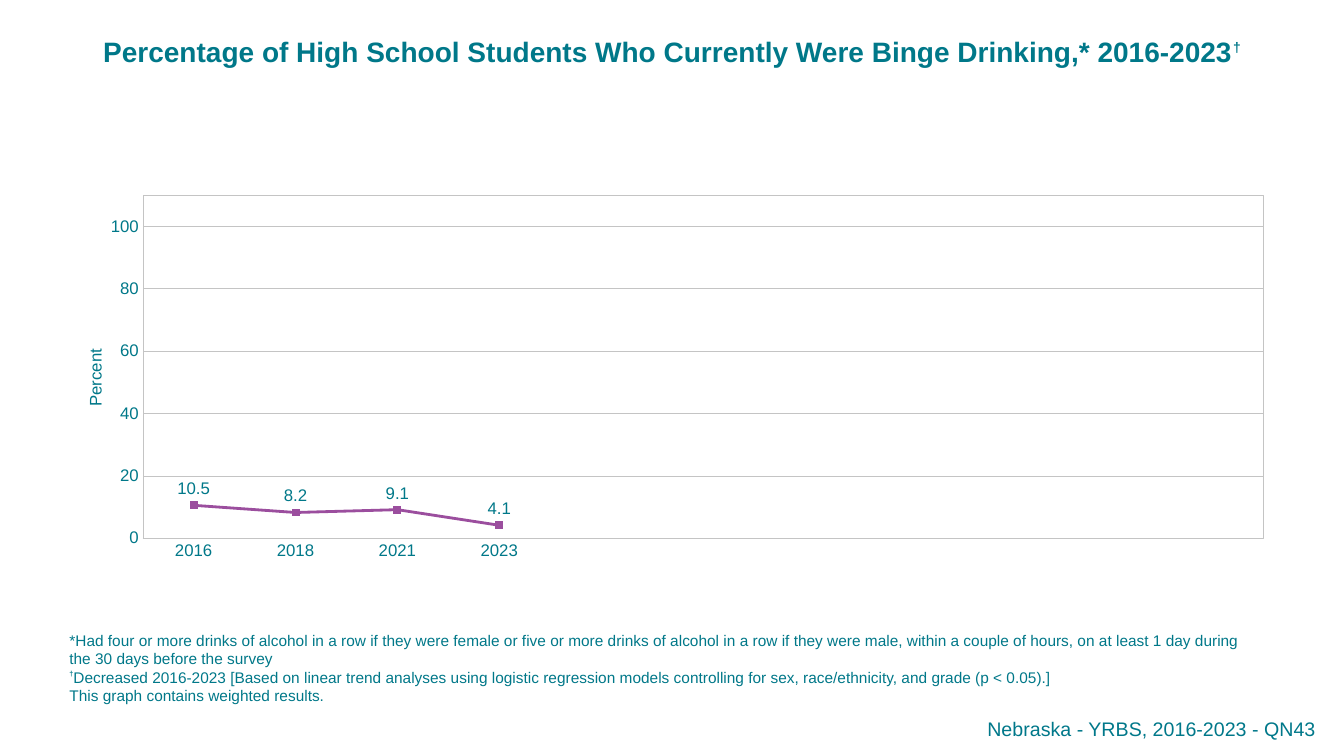
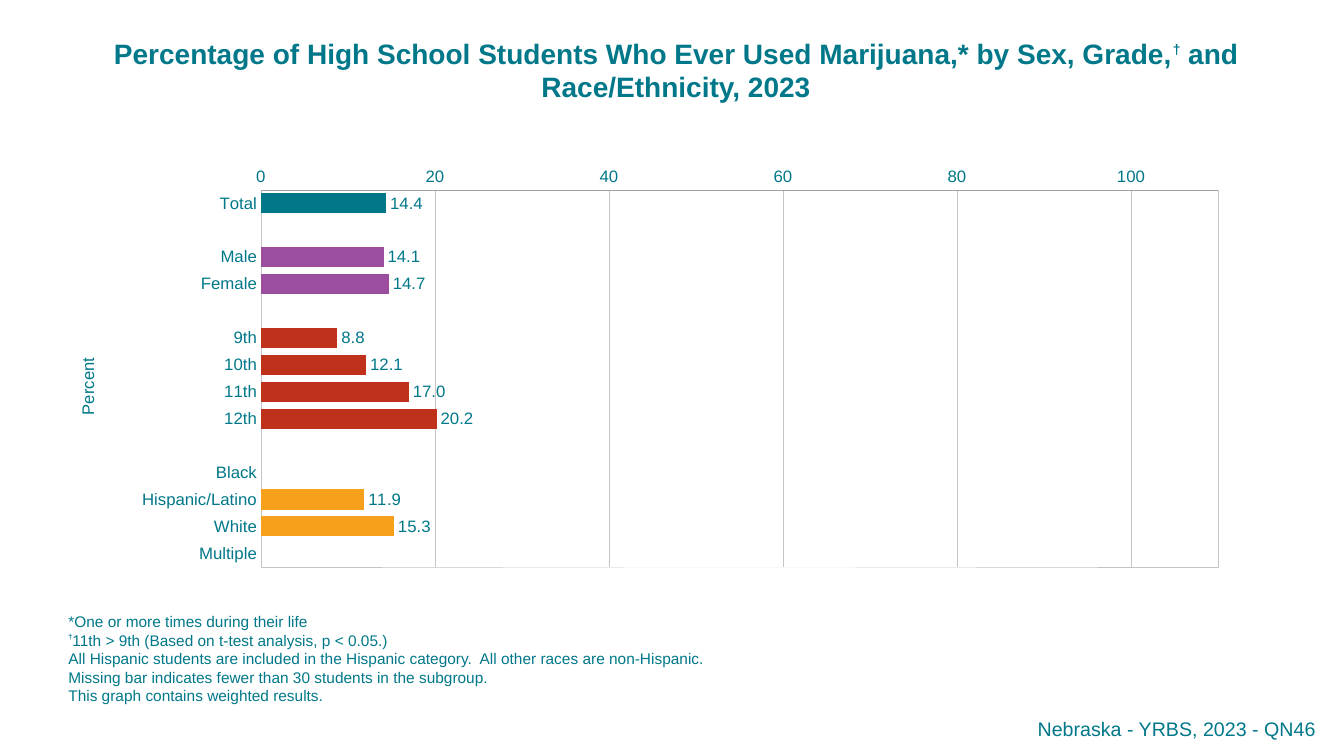
from dataclasses import dataclass
from typing import Any, NamedTuple, Optional

from pptx import Presentation
from pptx.chart.data import CategoryChartData
from pptx.dml.color import RGBColor
from pptx.enum.chart import XL_CHART_TYPE, XL_LABEL_POSITION, XL_MARKER_STYLE, XL_TICK_MARK
from pptx.enum.text import MSO_ANCHOR, MSO_AUTO_SIZE, PP_ALIGN
from pptx.oxml import parse_xml
from pptx.oxml.ns import nsdecls, qn
from pptx.util import Inches, Pt

LINE = XL_CHART_TYPE.LINE_MARKERS
BAR = XL_CHART_TYPE.BAR_CLUSTERED
ABOVE = XL_LABEL_POSITION.ABOVE
OUTSIDE = XL_LABEL_POSITION.OUTSIDE_END
SQUARE = XL_MARKER_STYLE.SQUARE
NO_TICK = XL_TICK_MARK.NONE
TOP, BOTTOM = MSO_ANCHOR.TOP, MSO_ANCHOR.BOTTOM
NO_AUTOFIT = MSO_AUTO_SIZE.NONE
LEFT, CENTER, RIGHT = PP_ALIGN.LEFT, PP_ALIGN.CENTER, PP_ALIGN.RIGHT

FONT = "Arial"
TEAL, FOOTER_TEAL = "007889", "00788A"
PURPLE, RED, ORANGE = "9B4E9E", "BF311B", "F7A01B"
GRID_GRAY, AXIS_GRAY = "C4C4C4", "A3A3A3"
TITLE_LINE, FOOTNOTE_LINE, FOOTNOTE_BOTTOM = 0.34, 0.18, 7.04
CHART_FORMAT = {"name": FONT, "size": Pt(12), "bold": False}


class Box(NamedTuple):
    left: float
    top: float
    width: float
    height: float


class Run(NamedTuple):
    text: str
    size: int
    bold: bool = False
    baseline: int = 0


class Bar(NamedTuple):
    label: str
    value: Optional[float] = None
    color: str = TEAL


@dataclass
class ChartSpec:
    kind: Any
    box: Box
    plot: Box
    axis_title: tuple[float, float]
    points: list[Bar]
    value_line: str
    grid_width: float
    label_position: Any


@dataclass
class SurveySlide:
    title: list[Run]
    title_box: Box
    chart: ChartSpec
    footnotes: list[list[Run]]
    footnote_left: float
    footnote_width: float
    footer: str


def rgb(color: str) -> RGBColor:
    return RGBColor.from_string(color)


def apply_format(target: Any, values: dict[str, Any]) -> None:
    for name, value in values.items():
        setattr(target, name, value)


def format_font(font: Any, values: dict[str, Any], color: str = TEAL) -> None:
    apply_format(font, values)
    font.color.rgb = rgb(color)


def format_line(line: Any, color: str, width: float) -> None:
    line.color.rgb = rgb(color)
    line.width = Pt(width)


def place(shape: Any, box: Box) -> None:
    shape.left, shape.top, shape.width, shape.height = map(Inches, box)


def write_text(shape: Any, paragraphs: list[list[Run]], alignment: Any,
               anchor: Any = TOP, color: str = TEAL) -> None:
    frame = shape.text_frame
    apply_format(frame, {"word_wrap": True, "auto_size": NO_AUTOFIT, "vertical_anchor": anchor})
    for index, runs in enumerate(paragraphs):
        paragraph = frame.add_paragraph() if index else frame.paragraphs[0]
        paragraph.alignment = alignment
        for item in runs:
            run = paragraph.add_run()
            run.text = item.text
            format_font(run.font, {"name": FONT, "size": Pt(item.size), "bold": item.bold}, color)
            if item.baseline:
                run._r.get_or_add_rPr().set("baseline", str(item.baseline * 1000))


def add_text(slide: Any, box: Box, paragraphs: list[list[Run]], alignment: Any,
             anchor: Any = TOP, color: str = TEAL) -> None:
    shape = slide.shapes.add_textbox(*map(Inches, box))
    write_text(shape, paragraphs, alignment, anchor, color)


def set_layout(parent: Any, values: dict[str, Any]) -> None:
    existing = parent.find(qn("c:layout"))
    position = 0
    if existing is not None:
        position = parent.index(existing)
        parent.remove(existing)
    entries = "".join(f'<c:{name} val="{value}"/>' for name, value in values.items())
    parent.insert(position, parse_xml(
        f'<c:layout {nsdecls("c")}><c:manualLayout>{entries}</c:manualLayout></c:layout>'))


def format_plot_area(chart: Any, plot: Box) -> None:
    plot_area = chart._chartSpace.chart.plotArea
    set_layout(plot_area, {"layoutTarget": "inner", "xMode": "edge", "yMode": "edge",
                           "x": plot.left, "y": plot.top, "w": plot.width, "h": plot.height})
    plot_area.append(parse_xml(
        f'<c:spPr {nsdecls("c", "a")}><a:noFill/><a:ln w="3175"><a:solidFill>'
        f'<a:srgbClr val="{GRID_GRAY}"/></a:solidFill></a:ln></c:spPr>'))


def format_axes(chart: Any, spec: ChartSpec) -> None:
    category_axis, value_axis = chart.category_axis, chart.value_axis
    for axis, color in ((category_axis, GRID_GRAY), (value_axis, spec.value_line)):
        apply_format(axis, {"major_tick_mark": NO_TICK, "minor_tick_mark": NO_TICK})
        format_font(axis.tick_labels.font, CHART_FORMAT)
        format_line(axis.format.line, color, 0.25)
    category_axis.has_major_gridlines = False
    category_axis.reverse_order = spec.kind == BAR
    apply_format(value_axis, {"minimum_scale": 0, "maximum_scale": 110, "major_unit": 20,
                              "has_major_gridlines": True, "has_title": True})
    apply_format(value_axis.tick_labels, {"number_format": "#,##0",
                                          "number_format_is_linked": False})
    format_line(value_axis.major_gridlines.format.line, GRID_GRAY, spec.grid_width)
    title = value_axis.axis_title
    run = title.text_frame.paragraphs[0].add_run()
    run.text = "Percent"
    format_font(run.font, CHART_FORMAT)
    body = title.text_frame._txBody.find(qn("a:bodyPr"))
    body.set("rot", "-5400000")
    body.set("vert", "horz")
    left, top = spec.axis_title
    set_layout(title._element, {"xMode": "edge", "yMode": "edge", "x": left, "y": top})


def format_series(plot: Any, spec: ChartSpec) -> None:
    series = plot.series[0]
    if spec.kind == LINE:
        series.smooth = False
        format_line(series.format.line, PURPLE, 2)
        apply_format(series.marker, {"style": SQUARE, "size": 5})
        series.marker.format.fill.solid()
        series.marker.format.fill.fore_color.rgb = rgb(PURPLE)
        format_line(series.marker.format.line, PURPLE, 0.75)
        return
    plot.gap_width = 34
    series.format.fill.solid()
    series.format.fill.fore_color.rgb = rgb(TEAL)
    for index, bar in enumerate(spec.points):
        if bar.value is not None:
            fill = series.points[index].format.fill
            fill.solid()
            fill.fore_color.rgb = rgb(bar.color)


def add_survey_chart(slide: Any, spec: ChartSpec) -> None:
    data = CategoryChartData()
    data.categories = [point.label for point in spec.points]
    data.add_series("Series 1", [point.value for point in spec.points])
    chart = slide.shapes.add_chart(spec.kind, *map(Inches, spec.box), data).chart
    apply_format(chart, {"has_title": False, "has_legend": False})
    format_font(chart.font, CHART_FORMAT)
    plot = chart.plots[0]
    apply_format(plot, {"vary_by_categories": False, "has_data_labels": True})
    labels = plot.data_labels
    apply_format(labels, {"show_value": True, "number_format": "#,##0.0",
                          "number_format_is_linked": False, "position": spec.label_position})
    format_font(labels.font, CHART_FORMAT)
    format_series(plot, spec)
    format_axes(chart, spec)
    format_plot_area(chart, spec.plot)


def title_run(text: str) -> Run:
    return Run(text, 20, True)


def footnote(text: str) -> list[Run]:
    return [Run(text, 11)]


TITLE_DAGGER = Run("†", 17, True, 40)
FOOTNOTE_DAGGER = Run("†", 9, True, 50)
WEIGHTED = footnote("This graph contains weighted results.")

SLIDES = [
    SurveySlide(
        title=[title_run("Percentage of High School Students Who Currently Were Binge "
                         "Drinking,* 2016-2023"), TITLE_DAGGER],
        title_box=Box(0.83, 0.29, 11.67, TITLE_LINE + 0.1),
        chart=ChartSpec(
            LINE, Box(0.57, 1.77, 12.08, 4.15), Box(0.07, 0.04, 0.92, 0.82), (0.02, 0.4),
            [Bar("2016", 10.5), Bar("2018", 8.2), Bar("2021", 9.1), Bar("2023", 4.1)]
            + [Bar("")] * 7,
            GRID_GRAY, 0.25, ABOVE),
        footnotes=[
            footnote("*Had four or more drinks of alcohol in a row if they were female or five or "
                     "more drinks of alcohol in a row if they were male, within a couple of hours, "
                     "on at least 1 day during the 30 days before the survey"),
            [FOOTNOTE_DAGGER] + footnote(
                "Decreased 2016-2023 [Based on linear trend analyses using logistic regression "
                "models controlling for sex, race/ethnicity, and grade (p < 0.05).]"),
            WEIGHTED],
        footnote_left=0.59, footnote_width=11.83,
        footer="Nebraska - YRBS, 2016-2023 - QN43"),
    SurveySlide(
        title=[title_run("Percentage of High School Students Who Ever Used Marijuana,* by Sex, "
                         "Grade,"), TITLE_DAGGER, title_run(" and Race/Ethnicity, 2023")],
        title_box=Box(0.75, 0.31, 11.91, 2 * TITLE_LINE + 0.1),
        chart=ChartSpec(
            BAR, Box(0.58, 1.67, 12.17, 4.67), Box(0.165, 0.035, 0.78, 0.81), (0.013, 0.39),
            [Bar("Total", 14.4), Bar(""),
             Bar("Male", 14.1, PURPLE), Bar("Female", 14.7, PURPLE), Bar(""),
             Bar("9th", 8.8, RED), Bar("10th", 12.1, RED),
             Bar("11th", 17, RED), Bar("12th", 20.2, RED), Bar(""),
             Bar("Black"), Bar("Hispanic/Latino", 11.9, ORANGE),
             Bar("White", 15.3, ORANGE), Bar("Multiple")],
            AXIS_GRAY, 0.5, OUTSIDE),
        footnotes=[
            footnote("*One or more times during their life"),
            [FOOTNOTE_DAGGER] + footnote("11th > 9th (Based on t-test analysis, p < 0.05.)"),
            footnote("All Hispanic students are included in the Hispanic category.  "
                     "All other races are non-Hispanic."),
            footnote("Missing bar indicates fewer than 30 students in the subgroup."),
            WEIGHTED],
        footnote_left=0.58, footnote_width=12.17,
        footer="Nebraska - YRBS, 2023 - QN46"),
]


def add_survey_slide(presentation: Any, content: SurveySlide) -> None:
    slide = presentation.slides.add_slide(presentation.slide_layouts[5])
    title = slide.shapes.title
    place(title, content.title_box)
    write_text(title, [content.title], CENTER)
    add_survey_chart(slide, content.chart)
    height = 5 * FOOTNOTE_LINE + 0.1
    footnote_box = Box(content.footnote_left, FOOTNOTE_BOTTOM - height,
                       content.footnote_width, height)
    add_text(slide, footnote_box, content.footnotes, LEFT, BOTTOM)
    add_text(slide, Box(3.75, 7.06, 9.4, 0.34), [[Run(content.footer, 14)]], RIGHT,
             color=FOOTER_TEAL)


def main() -> None:
    presentation = Presentation()
    presentation.slide_width = Inches(13.33)
    presentation.slide_height = Inches(7.5)
    for content in SLIDES:
        add_survey_slide(presentation, content)
    presentation.save("out.pptx")


if __name__ == "__main__":
    main()
